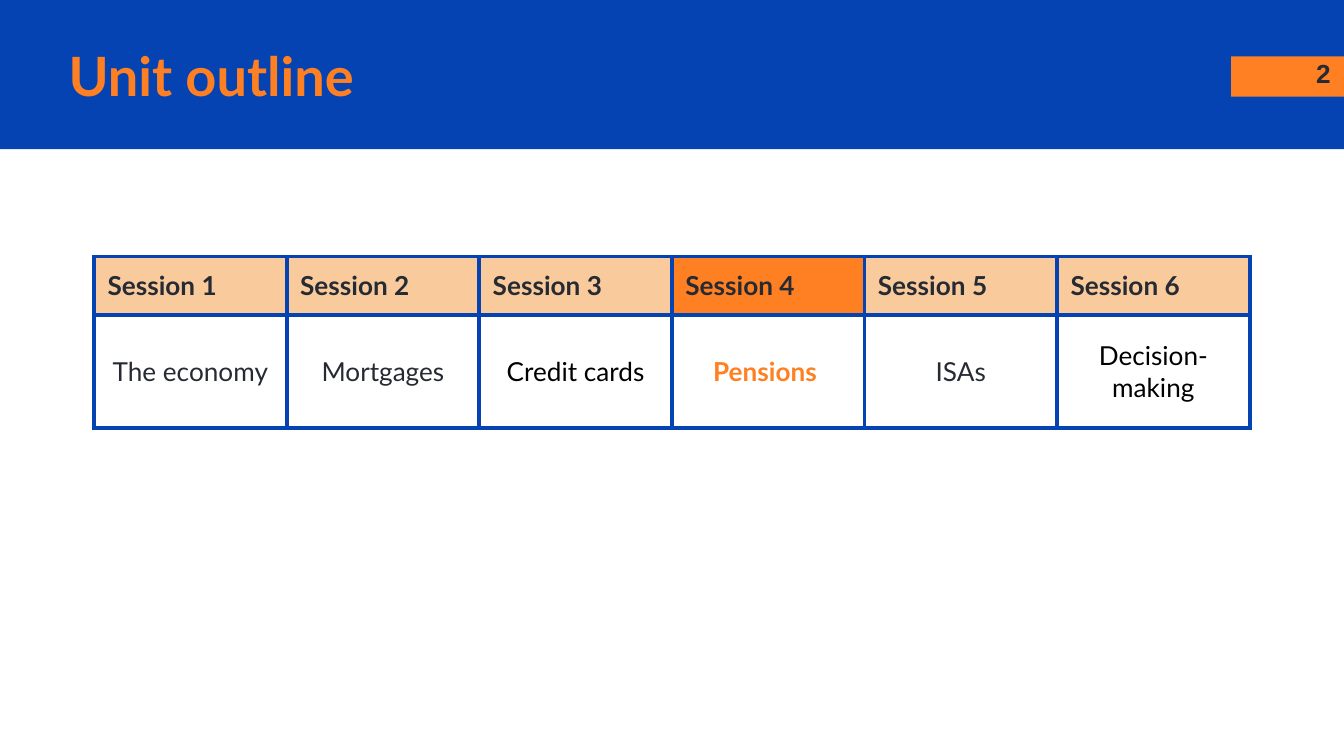
import dataclasses

import pptx
import pptx.dml.color
import pptx.enum.shapes
import pptx.enum.text
import pptx.oxml.ns
import pptx.util
from lxml import etree

Inches = pptx.util.Inches
ALIGN = pptx.enum.text.PP_ALIGN
MIDDLE = pptx.enum.text.MSO_ANCHOR.MIDDLE


@dataclasses.dataclass(frozen=True)
class Theme:
    blue: str = "0543B3"
    orange: str = "FF8022"
    peach: str = "F9CB9C"
    white: str = "FFFFFF"
    ink: str = "262A33"
    black: str = "000000"
    font: str = "Lato"
    plain: str = "Arial"
    head: float = 29
    text: float = 14
    rule: float = 2.25


THEME = Theme()

# Topic lines and text colour of each session
TOPICS = [
    (["The economy"], THEME.ink),
    (["Mortgages"], THEME.ink),
    (["Credit cards"], THEME.black),
    (["Pensions "], THEME.orange),
    (["ISAs"], THEME.ink),
    (["Decision-", "making"], THEME.black),
]
CURRENT = 4


def paint(fill, color):
    fill.solid()
    fill.fore_color.rgb = pptx.dml.color.RGBColor.from_string(color)


def add_run(para, text, color, size=THEME.text, bold=True, font=THEME.font):
    run = para.add_run()
    run.text = text
    run.font.name = font
    run.font.size = pptx.util.Pt(size)
    run.font.bold = bold
    run.font.color.rgb = pptx.dml.color.RGBColor.from_string(color)


def set_inset(item, inset):
    """Give a text frame or a table cell the same margin on all sides."""
    item.margin_left = item.margin_right = Inches(inset)
    item.margin_top = item.margin_bottom = Inches(inset)


def add_block(slide, left, top, width, height, color):
    block = slide.shapes.add_shape(
        pptx.enum.shapes.MSO_SHAPE.RECTANGLE,
        Inches(left), Inches(top), Inches(width), Inches(height))
    block.shadow.inherit = False
    paint(block.fill, color)
    block.line.fill.background()


def add_title(slide, text):
    title = slide.shapes.title
    title.left, title.top = Inches(0.41), Inches(0.28)
    title.width, title.height = Inches(8.46), Inches(0.56)
    frame = title.text_frame
    frame.auto_size = pptx.enum.text.MSO_AUTO_SIZE.NONE
    frame.vertical_anchor = MIDDLE
    set_inset(frame, 0.1)
    para = frame.paragraphs[0]
    para.alignment = ALIGN.LEFT
    add_run(para, text, THEME.orange, THEME.head)


def add_number(slide, text):
    box = slide.shapes.add_textbox(
        Inches(9.4), Inches(0.33), Inches(0.6), Inches(0.43))
    frame = box.text_frame
    frame.word_wrap = True
    set_inset(frame, 0.1)
    para = frame.paragraphs[0]
    para.alignment = ALIGN.RIGHT
    add_run(para, text, THEME.ink, font=THEME.plain)


def add_border(cell):
    props = cell._tc.get_or_add_tcPr()
    for side in ("lnL", "lnR", "lnT", "lnB"):
        line = etree.SubElement(props, pptx.oxml.ns.qn(f"a:{side}"),
                                w=str(pptx.util.Pt(THEME.rule)))
        fill = etree.SubElement(line, pptx.oxml.ns.qn("a:solidFill"))
        etree.SubElement(fill, pptx.oxml.ns.qn("a:srgbClr"), val=THEME.blue)


def fill_cell(cell, lines, color, back, bold, align, inset):
    add_border(cell)
    if back:
        paint(cell.fill, back)
    else:
        cell.fill.background()
    cell.vertical_anchor = MIDDLE
    set_inset(cell, inset)
    frame = cell.text_frame
    for i, line in enumerate(lines):
        para = frame.add_paragraph() if i else frame.paragraphs[0]
        para.alignment = align
        add_run(para, line, color, bold=bold)


def add_outline(slide):
    count, width, heights = len(TOPICS), 8.6, (0.43, 0.84)
    table = slide.shapes.add_table(
        len(heights), count, Inches(0.7), Inches(1.91),
        Inches(width), Inches(sum(heights))).table
    table.first_row = table.horz_banding = False
    for row, height in zip(table.rows, heights):
        row.height = Inches(height)
    for col in table.columns:
        col.width = Inches(width / count)
    for i, (lines, color) in enumerate(TOPICS):
        now = i + 1 == CURRENT
        fill_cell(table.cell(0, i), [f"Session {i + 1}"], THEME.ink,
                  THEME.orange if now else THEME.peach, True, ALIGN.LEFT, 0.1)
        fill_cell(table.cell(1, i), lines, color,
                  None, now, ALIGN.CENTER, 0.07)


def main():
    deck = pptx.Presentation()
    deck.slide_width, deck.slide_height = Inches(10), Inches(10 * 9 / 16)
    slide = deck.slides.add_slide(deck.slide_layouts[5])
    paint(slide.background.fill, THEME.white)
    add_block(slide, 0, 0, 10, 1.11, THEME.blue)
    add_block(slide, 9.16, 0.42, 0.84, 0.3, THEME.orange)
    add_number(slide, "2")
    add_title(slide, "Unit outline")
    # The title placeholder comes first, so bring it in front of the blocks
    slide.shapes._spTree.append(slide.shapes.title._element)
    add_outline(slide)
    deck.save("out.pptx")


if __name__ == "__main__":
    main()
